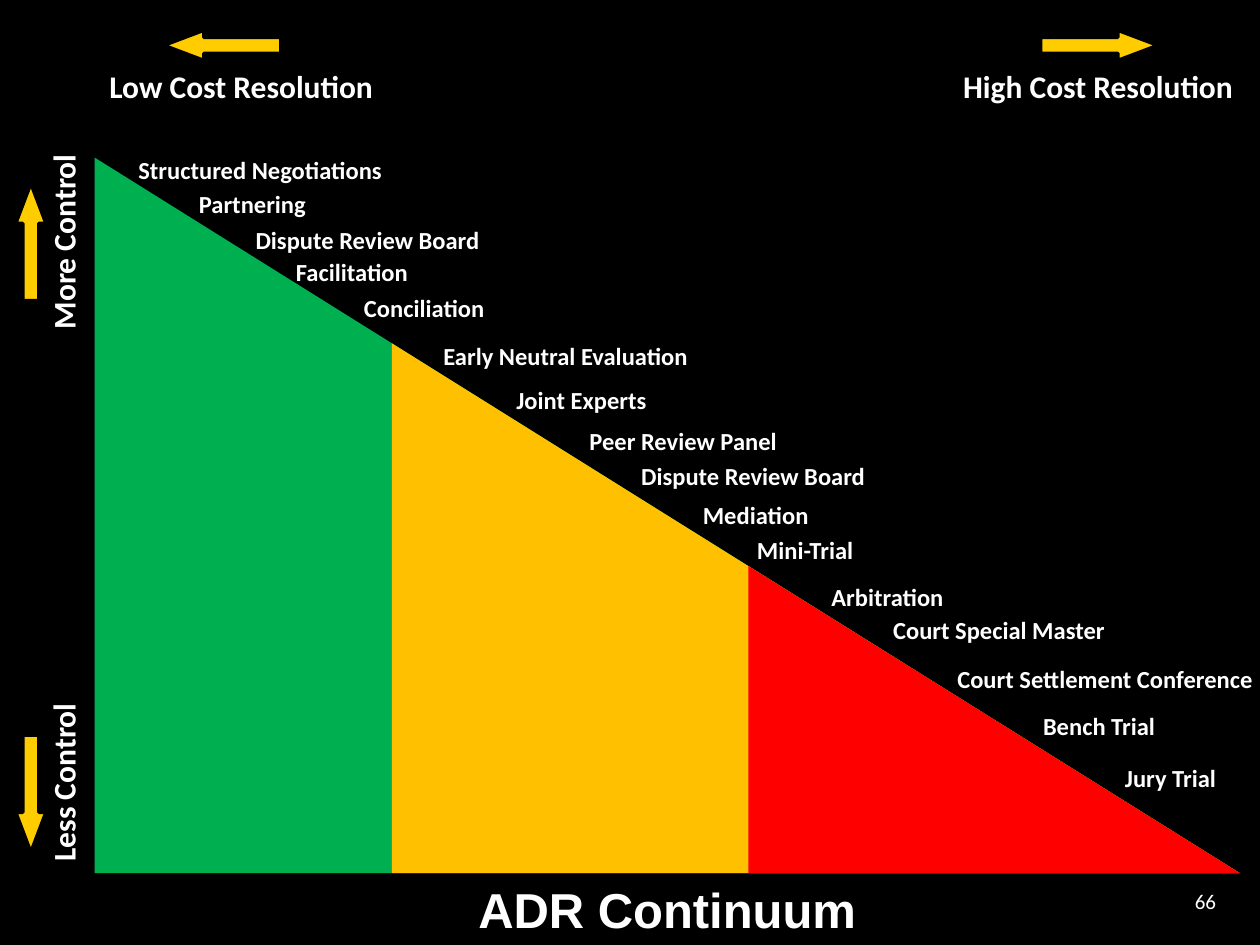
from pptx import Presentation
from pptx.dml.color import RGBColor
from pptx.enum.shapes import MSO_SHAPE as Shape
from pptx.enum.text import MSO_ANCHOR as Anchor, MSO_AUTO_SIZE as AutoSize, PP_ALIGN as Align
from pptx.util import Inches, Pt

BLACK = RGBColor(0x00, 0x00, 0x00)
WHITE = RGBColor(0xFF, 0xFF, 0xFF)
GREEN = RGBColor(0x00, 0xB0, 0x50)
AMBER = RGBColor(0xFF, 0xC0, 0x00)
RED = RGBColor(0xFF, 0x00, 0x00)
GOLD = RGBColor(0xFF, 0xCC, 0x00)

TITLE = "ADR Continuum"
PAGE_NUMBER = "66"

# Methods down the slope: text, left, top, width
METHODS = [
    ("Structured Negotiations", 1, 1.18, 2.18),
    ("Partnering", 1.48, 1.45, 1.21),
    ("Dispute Review Board", 1.93, 1.74, 2),
    ("Facilitation", 2.25, 1.99, 1.21),
    ("Conciliation", 2.79, 2.28, 1.21),
    ("Early Neutral Evaluation", 3.42, 2.66, 2.42),
    ("Joint Experts", 4, 3.01, 2),
    ("Peer Review Panel", 4.58, 3.33, 2),
    ("Dispute Review Board", 4.99, 3.61, 2),
    ("Mediation", 5.48, 3.92, 2),
    ("Mini-Trial", 5.91, 4.2, 2),
    ("Arbitration", 6.5, 4.57, 2),
    ("Court Special Master", 6.99, 4.83, 2),
    ("Court Settlement Conference", 7.5, 5.22, 2.66),
    ("Bench Trial", 8.18, 5.59, 2.66),
    ("Jury Trial", 8.83, 6.01, 1.82),
]

# Axis labels: text, left, top, width, height, upright
AXIS_LABELS = [
    ("Low Cost Resolution", 0.75, 0.48, 2.33, 0.4, False),
    ("High Cost Resolution", 7.51, 0.48, 2.41, 0.4, False),
    ("More Control", 0.25, 1.01, 0.5, 1.82, True),
    ("Less Control", 0.25, 5.3, 0.5, 1.82, True),
]

# Arrows: left, top, rotation
ARROWS = [(8.26, 0.24, 0), (1.3, 0.24, 180), (-0.22, 1.8, 270), (-0.22, 6.18, 90)]

# Zones share the lower right corner and one slope: left edge, colour
ZONES = [(0.75, GREEN), (3.11, AMBER), (5.94, RED)]
ZONE_RIGHT, ZONE_BOTTOM = 9.84, 6.93
SLOPE = 5.68 / 9.09


def write(box, text, size, font="Calibri", bold=True, align=Align.LEFT, anchor=Anchor.TOP):
    frame = box.text_frame
    frame.word_wrap = True
    frame.auto_size = AutoSize.NONE
    frame.vertical_anchor = anchor
    para = frame.paragraphs[0]
    para.alignment = align
    span = para.add_run()
    span.text = text
    span.font.name = font
    span.font.size = Pt(size)
    span.font.bold = bold
    span.font.color.rgb = WHITE


def add_label(page, text, left, top, width, height, size, **style):
    box = page.shapes.add_textbox(Inches(left), Inches(top), Inches(width), Inches(height))
    write(box, text, size, **style)
    return box


def add_filled(page, kind, left, top, width, height, color):
    shape = page.shapes.add_shape(kind, Inches(left), Inches(top), Inches(width), Inches(height))
    shape.shadow.inherit = False
    shape.fill.solid()
    shape.fill.fore_color.rgb = color
    shape.line.fill.background()
    return shape


def main():
    deck = Presentation()
    deck.slide_width, deck.slide_height = Inches(10), Inches(7.5)
    page = deck.slides.add_slide(deck.slide_layouts[5])
    page.background.fill.solid()
    page.background.fill.fore_color.rgb = BLACK

    # Title below the chart
    title = page.shapes.title
    title.left, title.top = Inches(0.75), Inches(6.93)
    title.width, title.height = Inches(9.09), Inches(0.57)
    write(title, TITLE, 28, font="Arial", align=Align.CENTER)

    # Coloured zones under the slope
    for left, color in ZONES:
        width = ZONE_RIGHT - left
        height = width * SLOPE
        zone = add_filled(page, Shape.ISOSCELES_TRIANGLE, left, ZONE_BOTTOM - height,
                          width, height, color)
        zone.adjustments[0] = 0

    # Methods along the slope
    for text, left, top, width in METHODS:
        add_label(page, text, left, top, width, 0.34, 14)

    # Axis labels and arrows
    for text, left, top, width, height, upright in AXIS_LABELS:
        label = add_label(page, text, left, top, width, height, 18, align=Align.CENTER,
                          anchor=Anchor.MIDDLE if upright else Anchor.TOP)
        if upright:
            label.text_frame._txBody.bodyPr.set("vert", "vert270")

    for left, top, rotation in ARROWS:
        arrow = add_filled(page, Shape.RIGHT_ARROW, left, top, 0.93, 0.24, GOLD)
        arrow.adjustments[0], arrow.adjustments[1] = 0.525, 1.323
        arrow.rotation = rotation
        arrow.line.color.rgb = BLACK
        arrow.line.width = Pt(2)

    # Page number
    add_label(page, PAGE_NUMBER, 7.42, 6.95, 2.33, 0.4, 12, bold=False,
              align=Align.RIGHT, anchor=Anchor.MIDDLE)

    deck.save("out.pptx")


if __name__ == "__main__":
    main()
